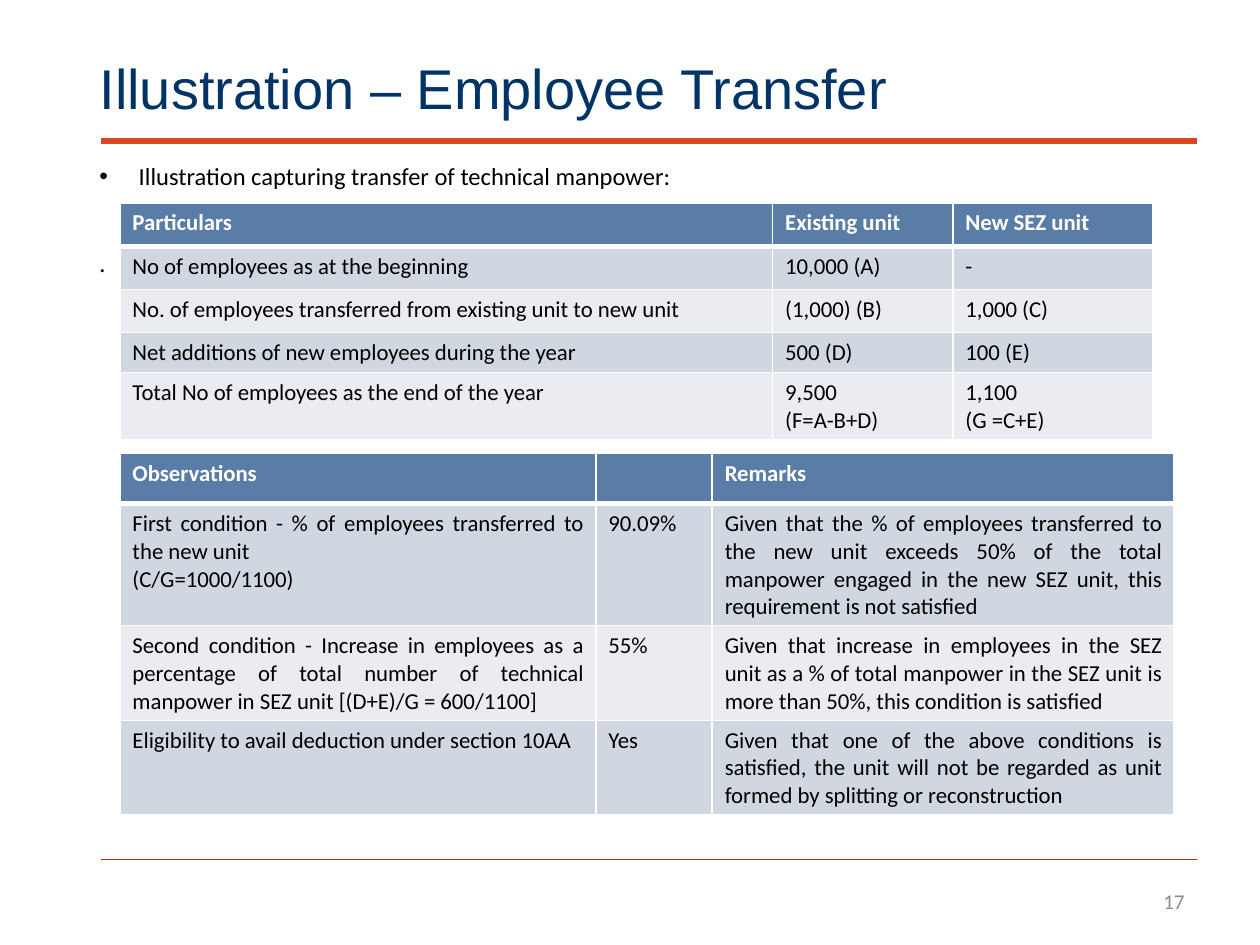
from lxml import etree
from pptx import Presentation
from pptx.dml.color import RGBColor
from pptx.enum.shapes import MSO_CONNECTOR, MSO_SHAPE
from pptx.enum.text import MSO_ANCHOR, PP_ALIGN
from pptx.oxml.ns import qn
from pptx.util import Pt

LEFT, RIGHT, JUSTIFY = PP_ALIGN.LEFT, PP_ALIGN.RIGHT, PP_ALIGN.JUSTIFY
TOP, MIDDLE = MSO_ANCHOR.TOP, MSO_ANCHOR.MIDDLE
STRAIGHT, BAR = MSO_CONNECTOR.STRAIGHT, MSO_SHAPE.PARALLELOGRAM

TITLE = "Illustration – Employee Transfer"
LEAD = "Illustration capturing transfer of technical manpower:"
STRAY = "."
PAGE = "17"
HEADER_FILL, BANDS = "597DA6", ("D1D7E1", "EAECF1")

TABLES = [
    {
        "left": 68.5, "top": 116,
        "cols": [373, 103, 114],
        "heights": [25, 24.5, 24.5, 23, 38],
        "aligns": [LEFT, LEFT, LEFT],
        "rows": [
            ["Particulars", "Existing unit", "New SEZ unit"],
            ["No of employees as at the beginning", "10,000 (A)", "-"],
            ["No. of employees transferred from existing unit to new unit",
             "(1,000) (B)", "1,000 (C)"],
            ["Net additions of new employees during the year", "500 (D)", "100 (E)"],
            ["Total No of employees as the end of the year",
             "9,500\n(F=A-B+D)", "1,100\n(G =C+E)"],
        ],
    },
    {
        "left": 68.5, "top": 259,
        "cols": [272, 66.5, 264],
        "heights": [25, 69.5, 54, 54],
        "aligns": [JUSTIFY, LEFT, JUSTIFY],
        "rows": [
            ["Observations", "", "Remarks"],
            ["First condition - % of employees transferred to the new unit\n(C/G=1000/1100)",
             "90.09%",
             "Given that the % of employees transferred to the new unit exceeds 50% of the "
             "total manpower engaged in the new SEZ unit, this requirement is not satisfied"],
            ["Second condition - Increase in employees as a percentage of total number of "
             "technical manpower in SEZ unit [(D+E)/G = 600/1100]",
             "55%",
             "Given that increase in employees in the SEZ unit as a % of total manpower in "
             "the SEZ unit is more than 50%, this condition is satisfied"],
            ["Eligibility to avail deduction under section 10AA",
             "Yes",
             "Given that one of the above conditions is satisfied, the unit will not be "
             "regarded as unit formed by splitting or reconstruction"],
        ],
    },
]


def rgb(value):
    return RGBColor.from_string(value)


def write(p, text, size, color="000000", name="Calibri", bold=False, **layout):
    r = p.add_run()
    r.text = text
    for key, value in {"size": Pt(size), "name": name, "bold": bold}.items():
        setattr(r.font, key, value)
    r.font.color.rgb = rgb(color)
    for key, value in layout.items():
        setattr(p, key, value)


def add_box(s, box, anchor):
    tf = s.shapes.add_textbox(*map(Pt, box)).text_frame
    tf.word_wrap = True
    tf.vertical_anchor = anchor
    return tf


def set_borders(cell, header):
    tcPr = cell._tc.get_or_add_tcPr()
    for i, side in enumerate(("lnL", "lnR", "lnT", "lnB")):
        width = 3 if header and side == "lnB" else 1
        ln = etree.Element(qn("a:" + side), w=str(Pt(width)))
        fill = etree.SubElement(ln, qn("a:solidFill"))
        etree.SubElement(fill, qn("a:srgbClr"), val="FFFFFF")
        tcPr.insert(i, ln)


def add_grid(s, data):
    rows, cols, heights = data["rows"], data["cols"], data["heights"]
    frame = s.shapes.add_table(len(rows), len(cols), Pt(data["left"]), Pt(data["top"]),
                               Pt(sum(cols)), Pt(sum(heights)))
    table = frame.table
    for column, width in zip(table.columns, cols):
        column.width = Pt(width)
    for i, (row, height) in enumerate(zip(rows, heights)):
        table.rows[i].height = Pt(height)
        header = i == 0
        for j, text in enumerate(row):
            cell = table.cell(i, j)
            cell.fill.solid()
            cell.fill.fore_color.rgb = rgb(HEADER_FILL if header else BANDS[(i - 1) % 2])
            set_borders(cell, header)
            tf = cell.text_frame
            for k, line in enumerate(text.split("\n")):
                p = tf.add_paragraph() if k else tf.paragraphs[0]
                write(p, line, 13, "FFFFFF" if header else "000000", bold=header,
                      alignment=LEFT if header else data["aligns"][j])


prs = Presentation()
prs.slide_width, prs.slide_height = Pt(720), Pt(540)
s = prs.slides.add_slide(prs.slide_layouts[5])

rule = s.shapes.add_connector(STRAIGHT, Pt(57.6), Pt(491), Pt(684), Pt(491))
rule.line.color.rgb = rgb("B22F16")
rule.line.width = Pt(0.5)
etree.SubElement(rule._element.spPr, qn("a:effectLst"))

bar = s.shapes.add_shape(BAR, Pt(57.6), Pt(78.7), Pt(626.4), Pt(3.6))
bar.adjustments[0] = 0
bar.shadow.inherit = False
bar.fill.solid()
bar.fill.fore_color.rgb = rgb("DA4720")
bar.line.fill.background()

title = s.shapes.title
for key, value in {"left": 49.7, "top": 30.2, "width": 620.6, "height": 44}.items():
    setattr(title, key, Pt(value))
title.text_frame.vertical_anchor = MIDDLE
write(title.text_frame.paragraphs[0], TITLE, 32, "003366", "Arial",
      alignment=LEFT, line_spacing=0.9)

tf = add_box(s, (522, 500.4, 162, 28.8), MIDDLE)
write(tf.paragraphs[0], PAGE, 12, "8C8C8C", alignment=RIGHT)

tf = add_box(s, (49.7, 88.6, 634.3, 74), TOP)
p = tf.paragraphs[0]
pPr = p._p.get_or_add_pPr()
pPr.set("marL", str(Pt(22.5)))
pPr.set("indent", str(Pt(-22.5)))
etree.SubElement(pPr, qn("a:buFont"), typeface="Arial")
etree.SubElement(pPr, qn("a:buChar"), char="•")
write(p, LEAD, 14, alignment=JUSTIFY, space_after=Pt(4))
write(tf.add_paragraph(), STRAY, 14, alignment=JUSTIFY, space_before=Pt(29))

for data in TABLES:
    add_grid(s, data)

prs.save("out.pptx")
